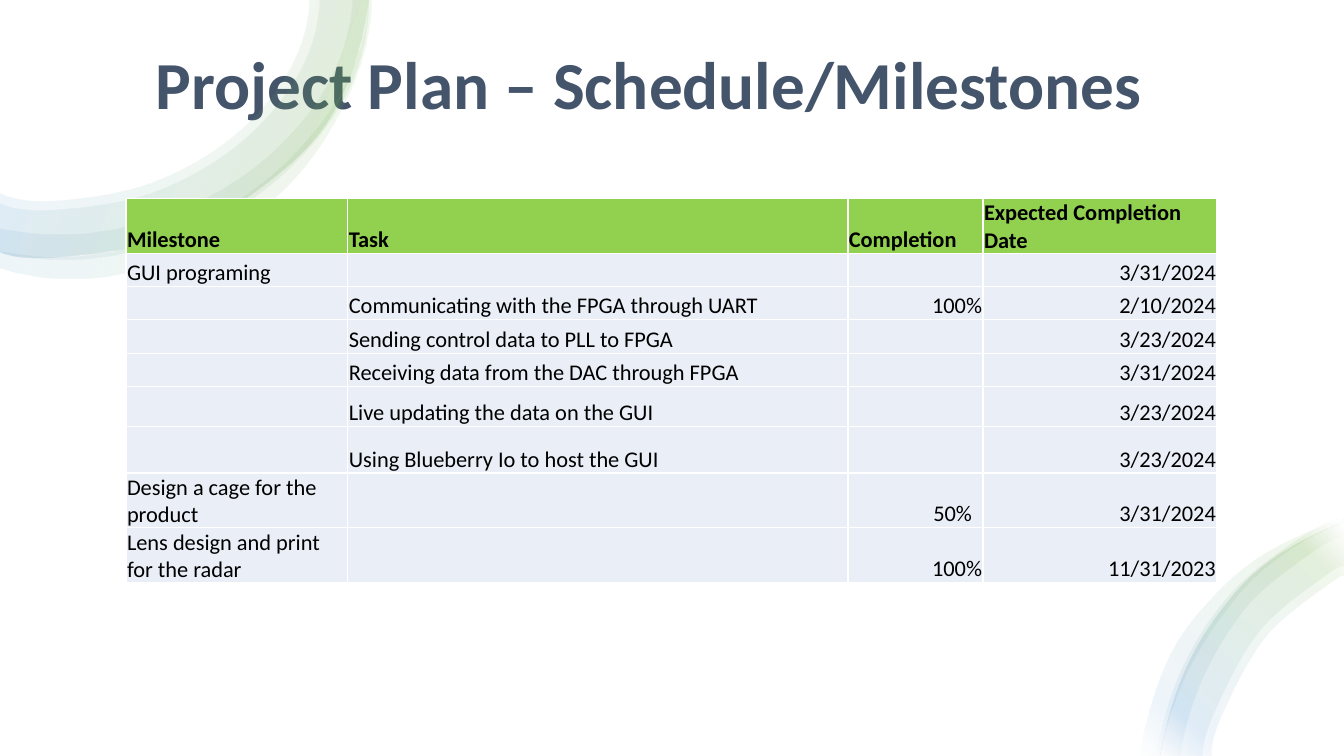
from pptx import Presentation
from pptx.dml.color import RGBColor
from pptx.enum.shapes import MSO_SHAPE
from pptx.enum.text import MSO_ANCHOR, PP_ALIGN
from pptx.oxml import parse_xml
from pptx.oxml.ns import nsdecls
from pptx.util import Inches, Pt

RECT = MSO_SHAPE.RECTANGLE
BOTTOM = MSO_ANCHOR.BOTTOM
LEFT, CENTER, RIGHT = PP_ALIGN.LEFT, PP_ALIGN.CENTER, PP_ALIGN.RIGHT

WHITE = RGBColor(0xFF, 0xFF, 0xFF)
BLACK = RGBColor(0x00, 0x00, 0x00)
SLATE = RGBColor(0x44, 0x54, 0x6A)
LIME = RGBColor(0x92, 0xD0, 0x50)
PALE = RGBColor(0xEA, 0xEF, 0xF7)
GREEN = RGBColor(0x70, 0xAD, 0x47)
BLUE = RGBColor(0x5B, 0x9B, 0xD5)

FONT = "Calibri"
WIDTH, HEIGHT = Inches(13.33), Inches(7.5)
STOPS = [(2, WHITE), (16, GREEN), (85, BLUE), (100, WHITE)]
OPACITY = 10

# Each band is an outer edge and an inner edge, as points on the curve.
TOP_EDGE = [(3.66, 0), (3.3, 1.13), (2.58, 1.87), (1.63, 2.37), (0.56, 2.55), (0, 2.49)]
TOP_BANDS = [
    (TOP_EDGE,
     [(0, 1.91), (0.56, 1.99), (1.49, 1.82), (2.31, 1.36), (2.87, 0.7), (3.07, 0)]),
    (TOP_EDGE,
     [(0, 2.01), (0.56, 2.08), (1.52, 1.91), (2.37, 1.43), (2.96, 0.74), (3.17, 0)]),
    ([(3.66, 0), (3.45, 0.91), (2.83, 1.71), (1.97, 2.27), (0.97, 2.55), (0, 2.5)],
     [(0, 2.26), (0.93, 2.3), (1.86, 2.05), (2.67, 1.54), (3.26, 0.82), (3.5, 0)]),
    ([(3.68, 0), (3.48, 0.88), (2.92, 1.77), (2.06, 2.43), (0.99, 2.75), (0, 2.66)],
     [(0, 2.49), (0.96, 2.52), (1.94, 2.22), (2.79, 1.65), (3.41, 0.86), (3.65, 0)]),
]
LOW_EDGE = [(13.33, 5.17), (12.58, 5.57), (12.09, 6.08), (11.73, 6.71), (11.51, 7.5)]
LOW_BANDS = [
    ([(13.33, 5.15), (12.56, 5.48), (12.01, 5.94), (11.58, 6.55), (11.3, 7.5)],
     [(11.51, 7.5), (11.78, 6.66), (12.29, 5.89), (12.81, 5.44), (13.33, 5.19)]),
    (LOW_EDGE,
     [(12.02, 7.5), (12.13, 7.07), (12.55, 6.32), (13.15, 5.81), (13.33, 5.73)]),
    ([(13.33, 5.16), (12.96, 5.29), (12.24, 5.85), (11.73, 6.62), (11.48, 7.5)],
     [(11.71, 7.5), (11.93, 6.73), (12.39, 5.99), (13.04, 5.46), (13.33, 5.33)]),
    (LOW_EDGE,
     [(11.93, 7.5), (12.06, 7.03), (12.49, 6.26), (13.11, 5.73), (13.33, 5.63)]),
]

COLS = [2.2, 4.96, 1.34, 2.32]
HEIGHTS = [0.33] * 5 + [0.4, 0.46, 0.34, 0.34]
ALIGNS = [LEFT, LEFT, RIGHT, RIGHT]
ROWS = [
    ("Milestone", "Task", "Completion", "Expected Completion Date"),
    ("GUI programing", "", "", "3/31/2024"),
    ("", "Communicating with the FPGA through UART", "100%", "2/10/2024"),
    ("", "Sending control data to PLL to FPGA", "", "3/23/2024"),
    ("", "Receiving data from the DAC through FPGA", "", "3/31/2024"),
    ("", "Live updating the data on the GUI", "", "3/23/2024"),
    ("", "Using Blueberry Io to host the GUI", "", "3/23/2024"),
    ("Design a cage for the product", "", "50%", "3/31/2024"),
    ("Lens design and print for the radar", "", "100%", "11/31/2023"),
]


def beyond(a, b, c):
    """Carry a curve through c, b, a one step past a."""
    return tuple(3 * p - 3 * q + r for p, q, r in zip(a, b, c))


def handles(knots):
    """Return both control points of each piece of a smooth curve."""
    ends = [beyond(*knots[:3]), *knots, beyond(*knots[:-4:-1])]
    return [
        [tuple(q + (r - p) / 6 for p, q, r in zip(a, b, c)),
         tuple(r - (s - q) / 6 for q, r, s in zip(b, c, d))]
        for a, b, c, d in zip(ends, ends[1:], ends[2:], ends[3:])]


def fade(shape, angle):
    """Fill with the see-through gradient; the angle runs clockwise."""
    stops = "".join(
        f'<a:gs pos="{pos * 1000}"><a:srgbClr val="{color}">'
        f'<a:alpha val="{OPACITY * 1000}"/></a:srgbClr></a:gs>'
        for pos, color in STOPS)
    shape.fill.background()
    props = shape._element.spPr
    blank = props.find("{*}noFill")
    props.replace(blank, parse_xml(
        f'<a:gradFill {nsdecls("a")} rotWithShape="1"><a:gsLst>{stops}</a:gsLst>'
        f'<a:lin ang="{angle * 60000}" scaled="0"/></a:gradFill>'))


def bend(shape, curves):
    """Turn the straight pieces into curves; None keeps a piece straight."""
    lines = list(shape._element.spPr.iter("{*}lnTo"))
    for line, curve in zip(lines, curves):
        if curve is None:
            continue
        points = "".join(
            f'<a:pt x="{Inches(x) - shape.left}" y="{Inches(y) - shape.top}"/>'
            for x, y in curve)
        arc = parse_xml(f'<a:cubicBezTo {nsdecls("a")}>{points}</a:cubicBezTo>')
        arc.append(line[0])
        line.getparent().replace(line, arc)


def add_band(slide, outer, inner, angle):
    points = [(Inches(x), Inches(y)) for x, y in outer + inner]
    pen = slide.shapes.build_freeform(*points[0])
    pen.add_line_segments(points[1:], close=True)
    band = pen.convert_to_shape()
    bend(band, handles(outer) + [None] + handles(inner))
    band.shadow.inherit = False
    fade(band, angle)
    band.line.fill.background()


def add_back(slide):
    back = slide.shapes.add_shape(RECT, 0, 0, WIDTH, HEIGHT)
    back.shadow.inherit = False
    back.fill.solid()
    back.fill.fore_color.rgb = WHITE
    back.line.fill.background()


def write(frame, text, size=16, color=BLACK, bold=False, align=LEFT, spacing=1.0):
    para = frame.paragraphs[0]
    para.alignment = align
    para.line_spacing = spacing
    if not text:
        para._p.get_or_add_endParaRPr().set("sz", str(size * 100))
        return
    run = para.add_run()
    run.text = text
    font = run.font
    font.name, font.size, font.bold = FONT, Pt(size), bold
    font.color.rgb = color


def add_title(slide, text):
    box = slide.shapes.add_textbox(Inches(1.06), Inches(0.5), Inches(10.75), Inches(0.78))
    frame = box.text_frame
    frame.word_wrap = True
    frame.vertical_anchor = BOTTOM
    write(frame, text, size=48, color=SLATE, bold=True, align=CENTER, spacing=0.9)


def style(cell, fill, inset):
    """Set margins, white borders and fill."""
    cell.vertical_anchor = BOTTOM
    cell.margin_left = cell.margin_top = Inches(0.01)
    cell.margin_right = Inches(inset)
    cell.margin_bottom = 0
    props = cell._tc.get_or_add_tcPr()
    for side in "LRTB":
        props.append(parse_xml(
            f'<a:ln{side} {nsdecls("a")} w="{Pt(1)}"><a:solidFill>'
            f'<a:srgbClr val="{WHITE}"/></a:solidFill></a:ln{side}>'))
    cell.fill.solid()
    cell.fill.fore_color.rgb = fill


def add_plan(slide):
    table = slide.shapes.add_table(
        len(ROWS), len(COLS), Inches(1.25), Inches(1.97),
        Inches(sum(COLS)), Inches(sum(HEIGHTS))).table
    table.horz_banding = False
    for col, width in zip(table.columns, COLS):
        col.width = Inches(width)
    for r, (row, height) in enumerate(zip(ROWS, HEIGHTS)):
        table.rows[r].height = Inches(height)
        head = r == 0
        for c, text in enumerate(row):
            cell = table.cell(r, c)
            style(cell, LIME if head else PALE, 0.11 if text == "50%" else 0.01)
            write(cell.text_frame, text, bold=head, align=LEFT if head else ALIGNS[c])


def main():
    deck = Presentation()
    deck.slide_width, deck.slide_height = WIDTH, HEIGHT
    slide = deck.slides.add_slide(deck.slide_layouts[6])
    add_back(slide)
    add_title(slide, "Project Plan – Schedule/Milestones")
    for bands, angle in ((TOP_BANDS, 200), (LOW_BANDS, 135)):
        for outer, inner in bands:
            add_band(slide, outer, inner, angle)
    add_plan(slide)
    deck.save("out.pptx")


if __name__ == "__main__":
    main()
